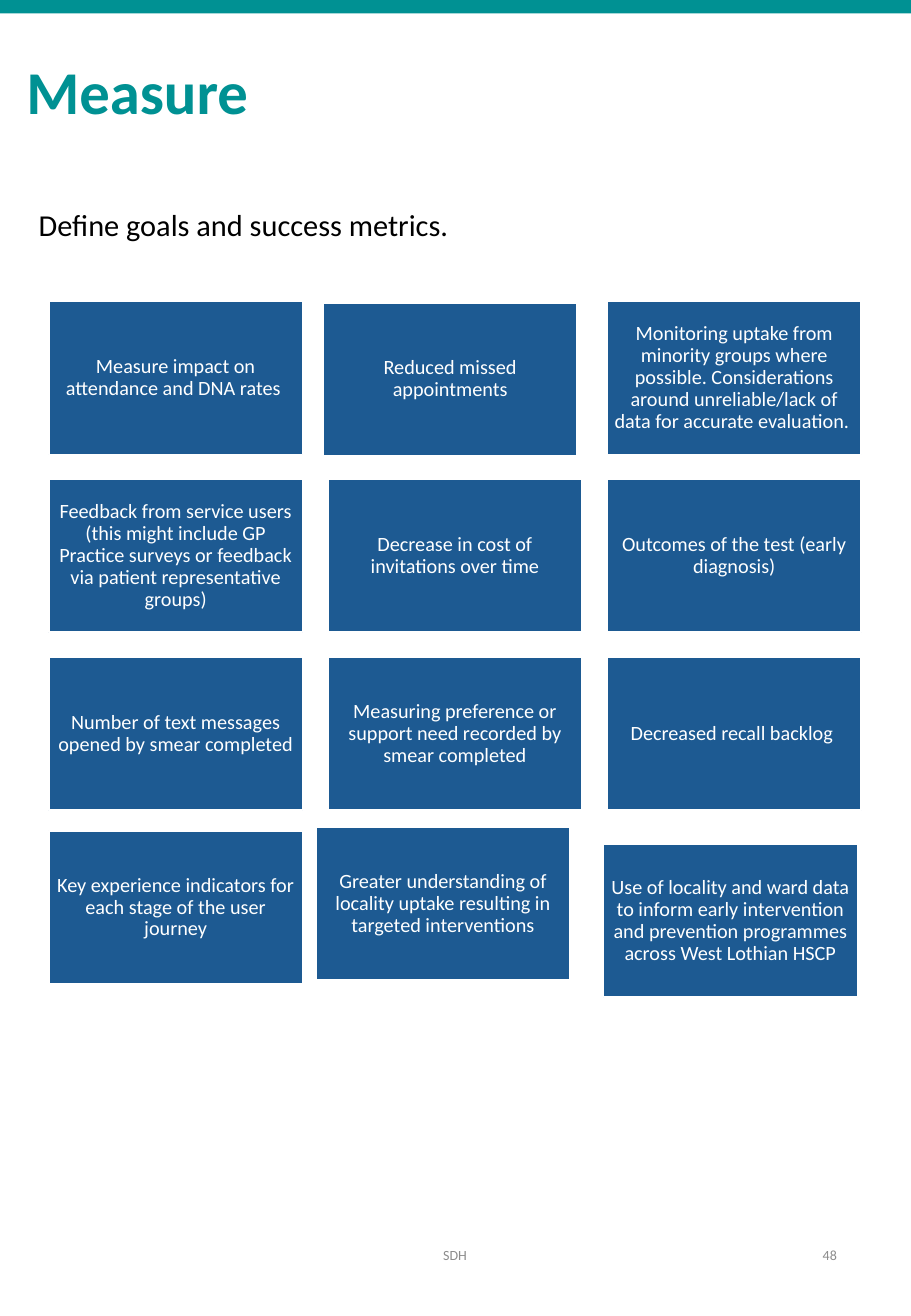
from pptx import Presentation
from pptx.dml.color import RGBColor
from pptx.enum.shapes import MSO_SHAPE
from pptx.enum.text import MSO_ANCHOR, PP_ALIGN
from pptx.util import Cm, Pt

TEAL = RGBColor(0x00, 0x91, 0x93)
BLUE = RGBColor(0x1D, 0x5A, 0x92)
GREY = RGBColor(0x8C, 0x8C, 0x8C)
BLACK = RGBColor(0, 0, 0)
WHITE = RGBColor(255, 255, 255)

FONT = "Calibri"
SLIDE_WIDTH, SLIDE_HEIGHT = 19.05, 27.51
GRID_LEFT, GRID_TOP = 1.02, 6.3
COLUMN_STEP, ROW_STEP = 5.84, 3.72
CARD_WIDTH, CARD_HEIGHT = 5.31, 3.2
CARD_MARGIN = 0.13

METRICS = [
    [
        "Measure impact on attendance and DNA rates ",
        "Reduced missed appointments",
        "Monitoring uptake from minority groups where possible. Considerations "
        "around unreliable/lack of data for accurate evaluation. ",
    ],
    [
        "Feedback from service users (this might include GP Practice surveys "
        "or feedback via patient representative groups)",
        "Decrease in cost of invitations over time",
        "Outcomes of the test (early diagnosis)",
    ],
    [
        "Number of text messages opened by smear completed",
        "Measuring preference or support need recorded by smear completed",
        "Decreased recall backlog ",
    ],
    [
        "Key experience indicators for each stage of the user journey",
        "Greater understanding of locality uptake resulting in targeted interventions",
        "Use of locality and ward data to inform early intervention and "
        "prevention programmes across West Lothian HSCP",
    ],
]
CARD_OFFSETS = {
    (0, 1): (-0.1, 0.03),
    (3, 0): (0, -0.09),
    (3, 1): (-0.25, -0.17),
    (3, 2): (-0.08, 0.19),
}


def write_text(shape, text, size, color, alignment, anchor, bold=False):
    """Put one styled paragraph in a shape and return it."""
    frame = shape.text_frame
    frame.word_wrap = True
    frame.vertical_anchor = anchor
    paragraph = frame.paragraphs[0]
    paragraph.text = text
    paragraph.alignment = alignment
    paragraph.font.name = FONT
    paragraph.font.size = Pt(size)
    paragraph.font.bold = bold
    paragraph.font.color.rgb = color
    return paragraph


def add_label(slide, box, text, size, color, alignment=PP_ALIGN.LEFT,
              anchor=MSO_ANCHOR.TOP, bold=False):
    """Add a text box at the given left, top, width and height."""
    shape = slide.shapes.add_textbox(*map(Cm, box))
    write_text(shape, text, size, color, alignment, anchor, bold)


def add_rectangle(slide, box, color):
    """Add a filled rectangle without line or shadow."""
    shape = slide.shapes.add_shape(MSO_SHAPE.RECTANGLE, *map(Cm, box))
    shape.shadow.inherit = False
    shape.fill.solid()
    shape.fill.fore_color.rgb = color
    shape.line.fill.background()
    return shape


def add_card(slide, left, top, text):
    """Add one metric card with centred white text."""
    card = add_rectangle(slide, (left, top, CARD_WIDTH, CARD_HEIGHT), BLUE)
    card.line.color.rgb = WHITE
    card.line.width = Pt(1)
    frame = card.text_frame
    frame.margin_left = frame.margin_right = Cm(CARD_MARGIN)
    frame.margin_top = frame.margin_bottom = Cm(CARD_MARGIN)
    paragraph = write_text(card, text, 12, WHITE, PP_ALIGN.CENTER, MSO_ANCHOR.MIDDLE)
    paragraph.line_spacing = 0.9


def add_metric_grid(slide):
    """Lay out the metric cards in rows and columns."""
    for row, texts in enumerate(METRICS):
        for column, text in enumerate(texts):
            shift_x, shift_y = CARD_OFFSETS.get((row, column), (0, 0))
            left = GRID_LEFT + column * COLUMN_STEP + shift_x
            top = GRID_TOP + row * ROW_STEP + shift_y
            add_card(slide, left, top, text)


def main():
    """Build the slide and save it."""
    presentation = Presentation()
    presentation.slide_width = Cm(SLIDE_WIDTH)
    presentation.slide_height = Cm(SLIDE_HEIGHT)
    slide = presentation.slides.add_slide(presentation.slide_layouts[6])

    add_label(slide, (6.3, 25.5, 6.43, 1.47), "SDH", 8.3, GREY,
              PP_ALIGN.CENTER, MSO_ANCHOR.MIDDLE)
    add_label(slide, (13.46, 25.5, 4.29, 1.47), "48", 8.3, GREY,
              PP_ALIGN.RIGHT, MSO_ANCHOR.MIDDLE)
    add_label(slide, (0.3, 0.99, 17.68, 1.8), "Measure", 36, TEAL, bold=True)
    add_rectangle(slide, (0, 0, SLIDE_WIDTH, 0.28), TEAL)
    add_label(slide, (0.56, 4.19, 16.56, 2.57), "Define goals and success metrics.  ",
              18, BLACK)
    add_metric_grid(slide)

    presentation.save("out.pptx")


if __name__ == "__main__":
    main()
